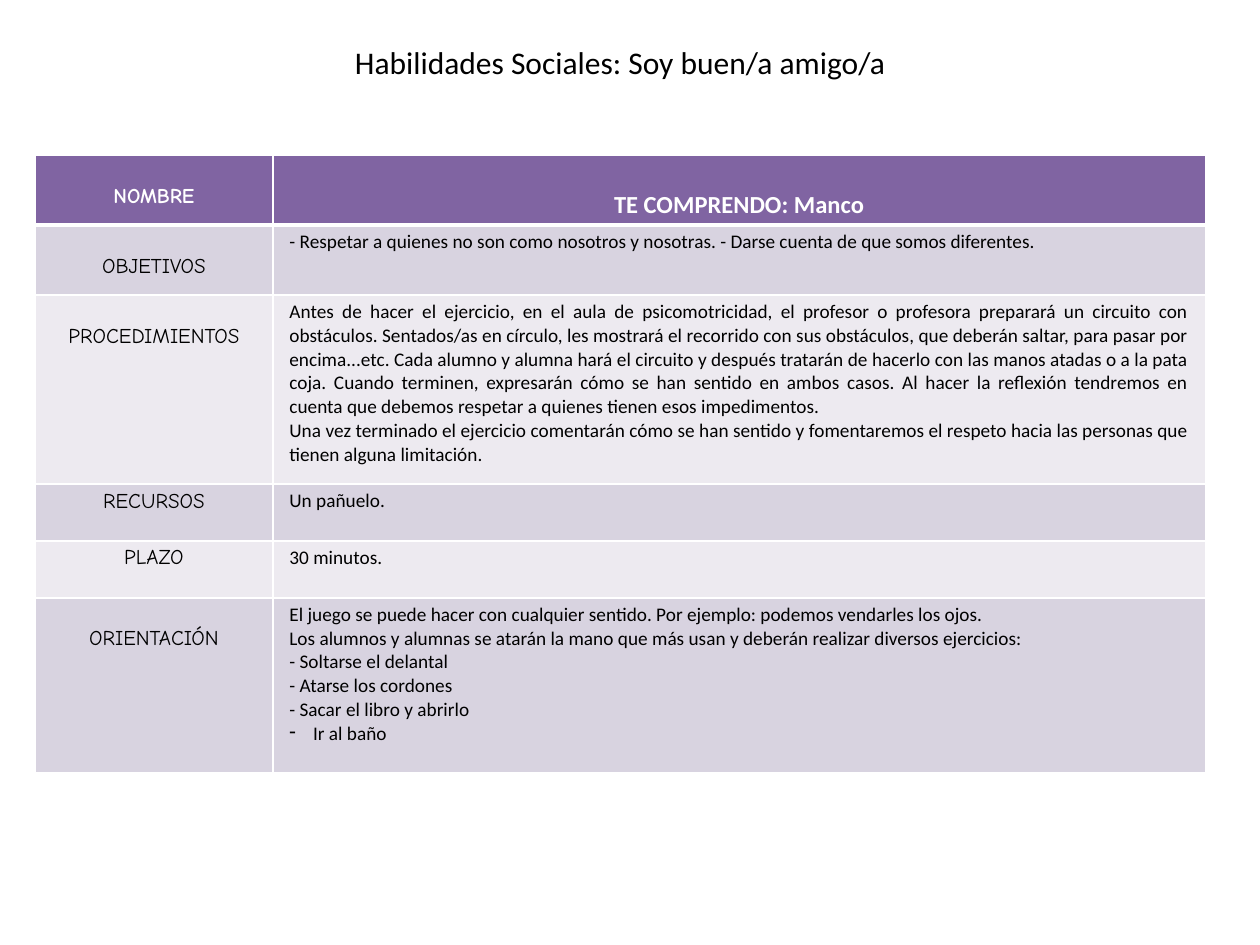
from dataclasses import dataclass
from lxml.etree import SubElement
from pptx import Presentation
from pptx.dml.color import RGBColor
from pptx.enum.text import PP_ALIGN
from pptx.oxml import parse_xml
from pptx.oxml.ns import nsdecls, qn
from pptx.util import Pt


@dataclass(frozen=True)
class Theme:
    head: str = "8064A2"
    bands: tuple = ("EDEAF0", "D8D3E0")
    ink: str = "000000"
    white: str = "FFFFFF"
    sans: str = "Calibri"
    comic: str = "Comic Neue"
    title: int = 18
    name: int = 14
    label: int = 12
    body: int = 11


class Page:
    def __init__(self, deck, theme):
        self.theme = theme
        self.slide = deck.slides.add_slide(deck.slide_layouts[6])

    def style(self, para, size, font, color, bold=False):
        for run in para.runs:
            run.font.size = Pt(size)
            run.font.name = font
            run.font.bold = bold
            run.font.color.rgb = RGBColor.from_string(color)

    def title(self, text, left, top, width, height):
        frame = self.slide.shapes.add_textbox(
            Pt(left), Pt(top), Pt(width), Pt(height)).text_frame
        frame.word_wrap = True
        frame.text = text
        self.style(frame.paragraphs[0], self.theme.title,
                   self.theme.sans, self.theme.ink)

    def border(self, cell, top, bottom):
        props = cell._tc.get_or_add_tcPr()
        sides = {"lnL": 1, "lnR": 1, "lnT": top, "lnB": bottom}
        for spot, (side, width) in enumerate(sides.items()):
            props.insert(spot, parse_xml(
                f'<a:{side} {nsdecls("a")} w="{Pt(width)}"><a:solidFill>'
                f'<a:srgbClr val="{self.theme.white}"/></a:solidFill></a:{side}>'))

    def bullet(self, para, mark, indent):
        props = para._p.get_or_add_pPr()
        props.set("marL", str(Pt(indent)))
        props.set("indent", str(-Pt(indent)))
        SubElement(props, qn("a:buChar")).set("char", mark)

    def cell(self, cell, text, row, size, font, align, drop):
        theme, head = self.theme, row == 0
        cell.margin_left = cell.margin_right = Pt(9.4)
        cell.margin_top, cell.margin_bottom = Pt(2.9 + drop), Pt(2.9)
        cell.fill.solid()
        cell.fill.fore_color.rgb = RGBColor.from_string(
            theme.head if head else theme.bands[row % 2])
        self.border(cell, 3 if row == 1 else 1, 3 if head else 1)
        cell.text_frame.text = text
        for para in cell.text_frame.paragraphs:
            para.alignment = align
            self.style(para, size, font, theme.white if head else theme.ink, head)

    def table(self, rows, left, top, widths):
        theme = self.theme
        grid = self.slide.shapes.add_table(
            len(rows), len(widths), Pt(left), Pt(top), Pt(sum(widths)),
            Pt(sum(row[0] for row in rows))).table
        for col, width in zip(grid.columns, widths):
            col.width = Pt(width)
        for spot, (height, drop, label, text) in enumerate(rows):
            grid.rows[spot].height = Pt(height)
            self.cell(grid.cell(spot, 0), label, spot, theme.label,
                      theme.comic, PP_ALIGN.CENTER, drop)
            if spot == 0:
                look = theme.name, theme.sans, PP_ALIGN.CENTER, 17
            else:
                look = theme.body, theme.sans, PP_ALIGN.JUSTIFY, 0
            self.cell(grid.cell(spot, 1), text, spot, *look)
        return grid


ROWS = [
    (40, 13.8, "NOMBRE", "TE COMPRENDO: Manco"),
    (40, 13.8, "OBJETIVOS",
     "- Respetar a quienes no son como nosotros y nosotras. "
     "- Darse cuenta de que somos diferentes."),
    (108, 13.8, "PROCEDIMIENTOS",
     "Antes de hacer el ejercicio, en el aula de psicomotricidad, el profesor o "
     "profesora preparará un circuito con obstáculos. Sentados/as en círculo, les "
     "mostrará el recorrido con sus obstáculos, que deberán saltar, para pasar por "
     "encima...etc. Cada alumno y alumna hará el circuito y después tratarán de "
     "hacerlo con las manos atadas o a la pata coja. Cuando terminen, expresarán "
     "cómo se han sentido en ambos casos. Al hacer la reflexión tendremos en "
     "cuenta que debemos respetar a quienes tienen esos impedimentos.\n"
     "Una vez terminado el ejercicio comentarán cómo se han sentido y fomentaremos "
     "el respeto hacia las personas que tienen alguna limitación."),
    (32.5, 0, "RECURSOS", "Un pañuelo."),
    (32.5, 0, "PLAZO", "30 minutos."),
    (100, 13.8, "ORIENTACIÓN",
     "El juego se puede hacer con cualquier sentido. Por ejemplo: podemos "
     "vendarles los ojos.\n"
     "Los alumnos y alumnas se atarán la mano que más usan y deberán realizar "
     "diversos ejercicios:\n"
     "- Soltarse el delantal\n"
     "- Atarse los cordones\n"
     "- Sacar el libro y abrirlo\n"
     "Ir al baño"),
]


def main():
    deck = Presentation()
    deck.slide_width, deck.slide_height = Pt(720), Pt(540)
    page = Page(deck, Theme())
    grid = page.table(ROWS, 20, 88.6, (136, 532.8))
    page.bullet(grid.cell(5, 1).text_frame.paragraphs[-1], "-", 13.5)
    page.title("Habilidades Sociales: Soy buen/a amigo/a", 195.8, 21, 345.6, 28.8)
    deck.save("out.pptx")


if __name__ == "__main__":
    main()
